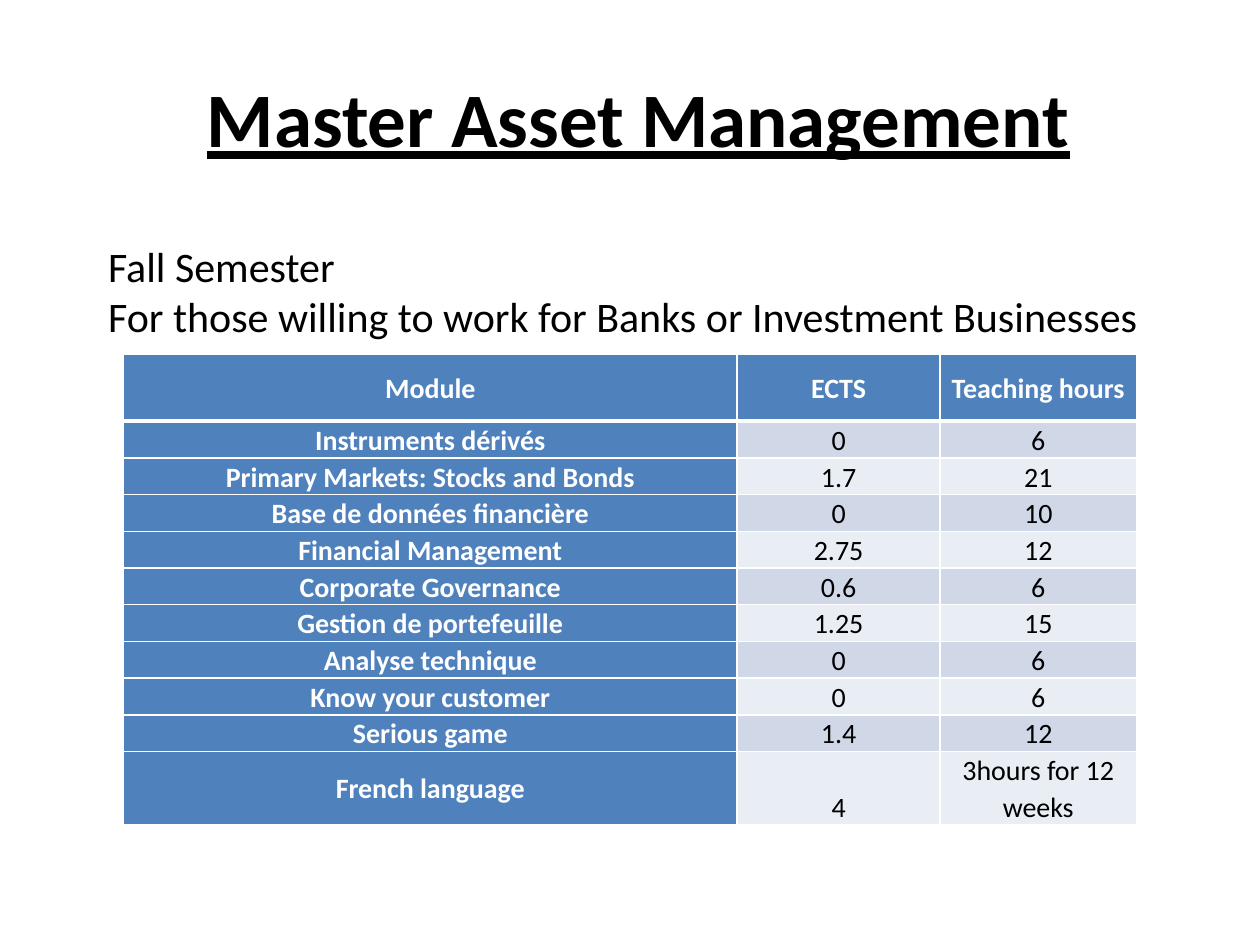
from lxml.etree import SubElement
from pptx import Presentation
from pptx.dml.color import RGBColor
from pptx.enum.text import MSO_ANCHOR as Anchor, MSO_AUTO_SIZE as AutoSize, PP_ALIGN as Align
from pptx.oxml.ns import qn
from pptx.util import Cm, Pt

# Content
TITLE = "Master Asset Management"
INTRO = ["Fall Semester", "For those willing to work for Banks or Investment Businesses"]
HEADER = ("Module", "ECTS", "Teaching hours")
MODULES = [
    ("Instruments dérivés", "0", "6"),
    ("Primary Markets: Stocks and Bonds", "1.7", "21"),
    ("Base de données financière", "0", "10"),
    ("Financial Management", "2.75", "12"),
    ("Corporate Governance", "0.6", "6"),
    ("Gestion de portefeuille", "1.25", "15"),
    ("Analyse technique", "0", "6"),
    ("Know your customer", "0", "6"),
    ("Serious game", "1.4", "12"),
    ("French language", "4", "3hours for 12 weeks"),
]

# Format, lengths in centimetres
FONT = "Calibri"
BLACK, WHITE, BLUE = "000000", "FFFFFF", "4F81BD"
BANDS = ("D0D8E8", "E9EDF4")
COLUMN_WIDTHS = (12.37, 4.09, 3.96)
ROW_HEIGHTS = [1.35] + [0.74] * (len(MODULES) - 1) + [1.47]


def rgb(color):
    return RGBColor.from_string(color)


def add_text(paragraph, text, size, color=BLACK, bold=False, underline=False,
             align=Align.LEFT, spacing=1.0):
    paragraph.alignment = align
    paragraph.line_spacing = spacing
    run = paragraph.add_run()
    run.text = text
    font = run.font
    font.name, font.size, font.bold, font.underline = FONT, Pt(size), bold, underline
    font.color.rgb = rgb(color)


def place(shape, left, top, width, height):
    shape.left, shape.top, shape.width, shape.height = map(Cm, (left, top, width, height))


def set_borders(cell, **widths):
    properties = cell._tc.get_or_add_tcPr()
    for position, side in enumerate("LRTB"):
        line = SubElement(properties, qn(f"a:ln{side}"), w=str(Pt(widths.get(side, 1))))
        fill = SubElement(line, qn("a:solidFill"))
        SubElement(fill, qn("a:srgbClr"), val=WHITE)
        properties.insert(position, line)


prs = Presentation()
prs.slide_width, prs.slide_height = Cm(25.4), Cm(19.05)
slide = prs.slides.add_slide(prs.slide_layouts[5])

# Title: only the words are bold and underlined
title = slide.shapes.title
place(title, 1.27, 0.76, 22.86, 3.18)
title.text_frame.vertical_anchor = Anchor.MIDDLE
heading = title.text_frame.paragraphs[0]
add_text(heading, " ", 44, align=Align.CENTER)
add_text(heading, TITLE, 44, bold=True, underline=True, align=Align.CENTER)

# Module table
table = slide.shapes.add_table(
    len(ROW_HEIGHTS), len(HEADER), Cm(2.49), Cm(7.14),
    Cm(sum(COLUMN_WIDTHS)), Cm(sum(ROW_HEIGHTS))).table
table.first_row = table.horz_banding = False
for column, width in zip(table.columns, COLUMN_WIDTHS):
    column.width = Cm(width)
for row, height in zip(table.rows, ROW_HEIGHTS):
    row.height = Cm(height)

for r, values in enumerate([HEADER] + MODULES):
    for c, value in enumerate(values):
        cell = table.cell(r, c)
        is_label = r == 0 or c == 0
        is_middle = r == 0 or (c == 0 and r == len(MODULES))
        cell.margin_left = cell.margin_right = Cm(0.12)
        cell.margin_top = cell.margin_bottom = 0
        cell.vertical_anchor = Anchor.MIDDLE if is_middle else Anchor.BOTTOM
        cell.fill.solid()
        cell.fill.fore_color.rgb = rgb(BLUE if is_label else BANDS[(r - 1) % 2])
        set_borders(cell, T=3 if r == 1 else 1, B=3 if r == 0 else 1)
        add_text(cell.text_frame.paragraphs[0], value, 16, bold=is_label,
                 color=WHITE if is_label else BLACK, align=Align.CENTER, spacing=1.07)

# Introduction above the table
intro = slide.shapes.add_textbox(Cm(1.93), Cm(4.72), Cm(21.51), Cm(2.31)).text_frame
intro.word_wrap = True
intro.auto_size = AutoSize.SHAPE_TO_FIT_TEXT
for i, sentence in enumerate(INTRO):
    add_text(intro.add_paragraph() if i else intro.paragraphs[0], sentence, 24)

prs.save("out.pptx")
